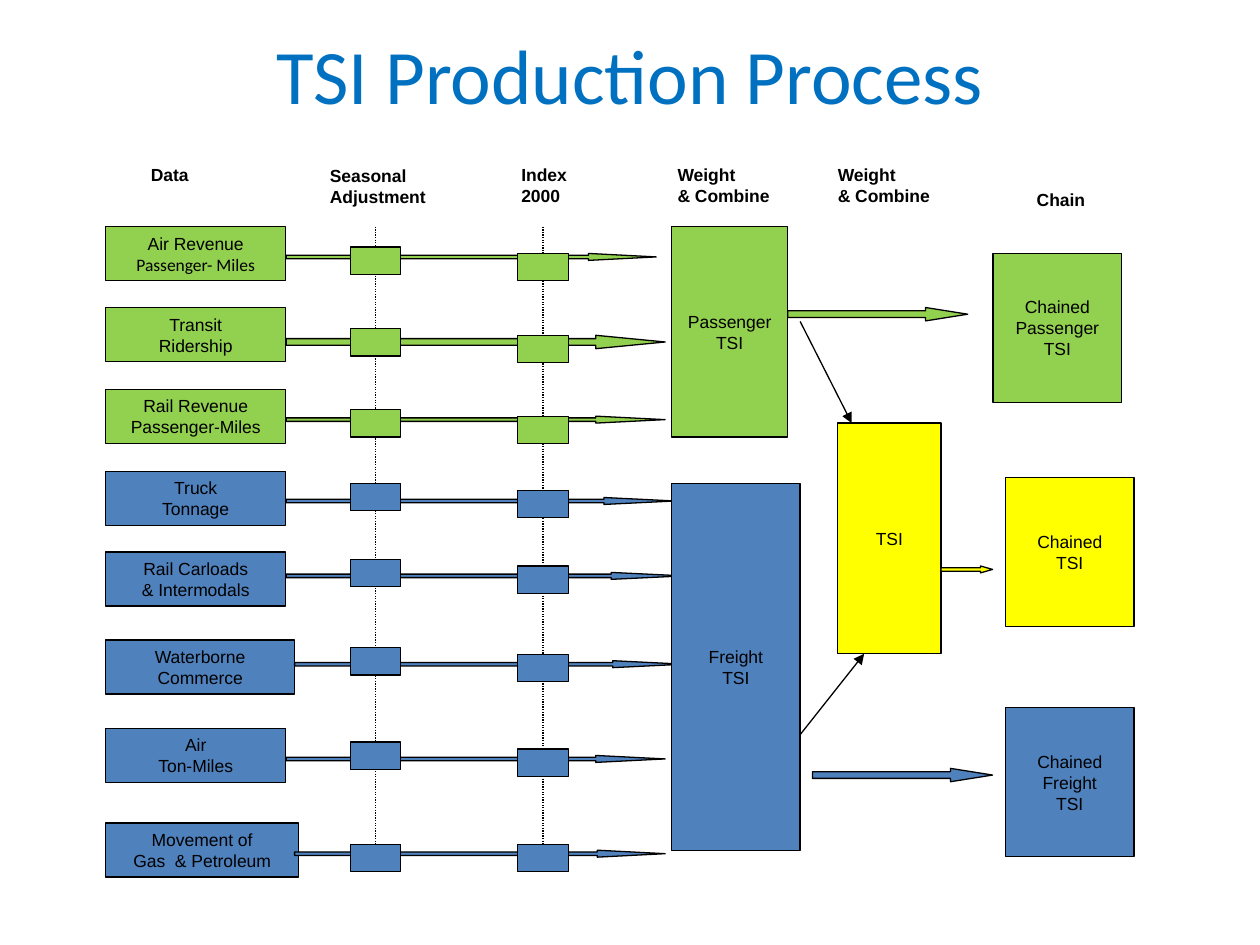
from dataclasses import dataclass

from lxml import etree
from pptx import Presentation
from pptx.dml.color import RGBColor
from pptx.enum.dml import MSO_LINE
from pptx.enum.shapes import MSO_CONNECTOR, MSO_SHAPE
from pptx.enum.text import MSO_ANCHOR, MSO_AUTO_SIZE, PP_ALIGN
from pptx.oxml.ns import qn
from pptx.slide import Slide
from pptx.util import Cm, Pt

CENTER, LEFT = PP_ALIGN.CENTER, PP_ALIGN.LEFT
MIDDLE = MSO_ANCHOR.MIDDLE
FIT_TEXT = MSO_AUTO_SIZE.SHAPE_TO_FIT_TEXT
STRAIGHT = MSO_CONNECTOR.STRAIGHT
DOTTED = MSO_LINE.ROUND_DOT
RECTANGLE = MSO_SHAPE.RECTANGLE
PROCESS = MSO_SHAPE.FLOWCHART_PROCESS
RIGHT_ARROW = MSO_SHAPE.RIGHT_ARROW

COLORS = {
    "title": "0070C0",
    "ink": "000000",
    "passenger": "92D050",
    "freight": "4F81BD",
    "total": "FFFF00",
}

HEADINGS = [  # text, left, top, width, height
    ("Data", 2.79, 3.18, 1.47, 0.69),
    ("Seasonal\nAdjustment", 6.4, 3.2, 2.64, 1.12),
    ("Index\n2000", 10.26, 3.18, 1.55, 1.12),
    ("Weight\n& Combine", 13.41, 3.18, 2.57, 1.12),
    ("Weight\n& Combine", 16.64, 3.18, 2.57, 1.12),
    ("Chain", 20.65, 3.68, 1.6, 0.69),
]

# text, color, box top, box width, arrow (left, top, right, height),
# seasonal adjustment top, index top
DATA_ROWS = [
    ("Air Revenue\nPassenger- Miles", "passenger", 4.57, 3.63, (5.77, 5.11, 13.23, 0.14), 4.98, 5.11),
    ("Transit\nRidership", "passenger", 6.2, 3.63, (5.77, 6.76, 13.41, 0.27), 6.63, 6.76),
    ("Rail Revenue\nPassenger-Miles", "passenger", 7.85, 3.63, (5.77, 8.39, 13.41, 0.14), 8.26, 8.39),
    ("Truck\nTonnage", "freight", 9.5, 3.63, (5.77, 10.03, 13.61, 0.14), 9.75, 9.89),
    ("Rail Carloads\n& Intermodals", "freight", 11.13, 3.63, (5.77, 11.54, 13.79, 0.14), 11.28, 11.41),
    ("Waterborne\nCommerce", "freight", 12.9, 3.81, (5.94, 13.32, 13.79, 0.14), 13.06, 13.19),
    ("Air\nTon-Miles", "freight", 14.68, 3.63, (5.77, 15.23, 13.41, 0.14), 14.96, 15.1),
    ("Movement of\nGas  & Petroleum", "freight", 16.59, 3.89, (5.94, 17.14, 13.41, 0.14), 17.02, 17.02),
]
DATA_LEFT, DATA_HEIGHT = 2.13, 1.09
STEP_WIDTH, STEP_HEIGHT = 1.02, 0.55
SEASONAL_LEFT, INDEX_LEFT = 7.06, 10.44
GUIDE_TOP, GUIDE_BOTTOM = 4.57, 17.55
FLOW_HEAD, OUTPUT_HEAD = 0.183, 0.234  # arrowhead share of the arrow length

INDEX_BOXES = [  # text, color, left, top, width, height
    ("Passenger\nTSI", "passenger", 13.54, 4.57, 2.34, 4.24),
    ("Freight\nTSI", "freight", 13.54, 9.75, 2.59, 7.39),
    ("TSI", "total", 16.89, 8.53, 2.08, 4.65),
    ("Chained\nPassenger\nTSI", "passenger", 20.02, 5.11, 2.59, 3),
    ("Chained\nTSI", "total", 20.27, 9.63, 2.59, 3),
    ("Chained\nFreight\nTSI", "freight", 20.27, 14.27, 2.59, 3),
]
OUTPUT_ARROWS = [  # color, left, top, right, height
    ("passenger", 15.88, 6.2, 19.51, 0.27),
    ("freight", 16.38, 15.49, 20.01, 0.27),
    ("total", 18.97, 11.41, 20.01, 0.14),
]
COMBINE_LINES = [(16.13, 6.48, 17.17, 8.53), (16.13, 14.81, 17.42, 13.18)]


def rgb(name):
    return RGBColor.from_string(COLORS[name])


@dataclass
class Diagram:
    slide: Slide
    font: str = "Arial"
    title_font: str = "Calibri"
    text_size: float = 10
    title_size: float = 44
    line_width: float = 0.75

    def format_text(self, frame, text, align, bold=False):
        frame.text = text
        frame.word_wrap = False
        for paragraph in frame.paragraphs:
            paragraph.alignment = align
            paragraph.font.name = self.font
            paragraph.font.size = Pt(self.text_size)
            paragraph.font.bold = bold
            paragraph.font.color.rgb = rgb("ink")

    def title(self, text, left, top, width, height):
        shape = self.slide.shapes.title
        shape.left, shape.top, shape.width, shape.height = map(Cm, (left, top, width, height))
        shape.text_frame.text = text
        shape.text_frame.vertical_anchor = MIDDLE
        paragraph = shape.text_frame.paragraphs[0]
        paragraph.alignment = CENTER
        paragraph.font.name = self.title_font
        paragraph.font.size = Pt(self.title_size)
        paragraph.font.color.rgb = rgb("title")

    def heading(self, text, left, top, width, height):
        shape = self.slide.shapes.add_textbox(Cm(left), Cm(top), Cm(width), Cm(height))
        self.format_text(shape.text_frame, text, LEFT, bold=True)
        shape.text_frame.auto_size = FIT_TEXT

    def box(self, color, left, top, width, height, text="", kind=RECTANGLE):
        shape = self.slide.shapes.add_shape(kind, Cm(left), Cm(top), Cm(width), Cm(height))
        shape.shadow.inherit = False
        shape.fill.solid()
        shape.fill.fore_color.rgb = rgb(color)
        shape.line.color.rgb = rgb("ink")
        shape.line.width = Pt(self.line_width)
        if text:
            self.format_text(shape.text_frame, text, CENTER)
            shape.text_frame.vertical_anchor = MIDDLE
        return shape

    def block_arrow(self, color, left, top, right, height, head_share):
        width = right - left
        shape = self.box(color, left, top, width, height, kind=RIGHT_ARROW)
        shape.adjustments[1] = head_share * width / height

    def line(self, start_x, start_y, end_x, end_y, dash=None, arrowhead=False):
        connector = self.slide.shapes.add_connector(
            STRAIGHT, Cm(start_x), Cm(start_y), Cm(end_x), Cm(end_y))
        connector.line.color.rgb = rgb("ink")
        connector.line.width = Pt(self.line_width)
        if dash:
            connector.line.dash_style = dash
        properties = connector._element.spPr
        if arrowhead:
            etree.SubElement(properties.find(qn("a:ln")), qn("a:tailEnd"), type="triangle")
        etree.SubElement(properties, qn("a:effectLst"))


def main():
    presentation = Presentation()
    presentation.slide_width, presentation.slide_height = Cm(25.4), Cm(19.05)
    title_only = presentation.slide_layouts[5]
    diagram = Diagram(presentation.slides.add_slide(title_only))

    diagram.title("TSI Production Process", 1.27, 0.43, 22.86, 2.11)
    for heading in HEADINGS:
        diagram.heading(*heading)

    for text, color, top, width, arrow, _, _ in DATA_ROWS:
        box = diagram.box(color, DATA_LEFT, top, width, DATA_HEIGHT, text, PROCESS)
        if text.startswith("Air Revenue"):
            box.text_frame.paragraphs[1].font.name = diagram.title_font
        diagram.block_arrow(color, *arrow, FLOW_HEAD)

    for left, column in ((SEASONAL_LEFT, 5), (INDEX_LEFT, 6)):
        center = left + STEP_WIDTH / 2
        diagram.line(center, GUIDE_TOP, center, GUIDE_BOTTOM, dash=DOTTED)
        for row in DATA_ROWS:
            diagram.box(row[1], left, row[column], STEP_WIDTH, STEP_HEIGHT)

    for text, color, *bounds in INDEX_BOXES:
        diagram.box(color, *bounds, text)
    for arrow in OUTPUT_ARROWS:
        diagram.block_arrow(*arrow, OUTPUT_HEAD)
    for ends in COMBINE_LINES:
        diagram.line(*ends, arrowhead=True)

    presentation.save("out.pptx")


if __name__ == "__main__":
    main()
